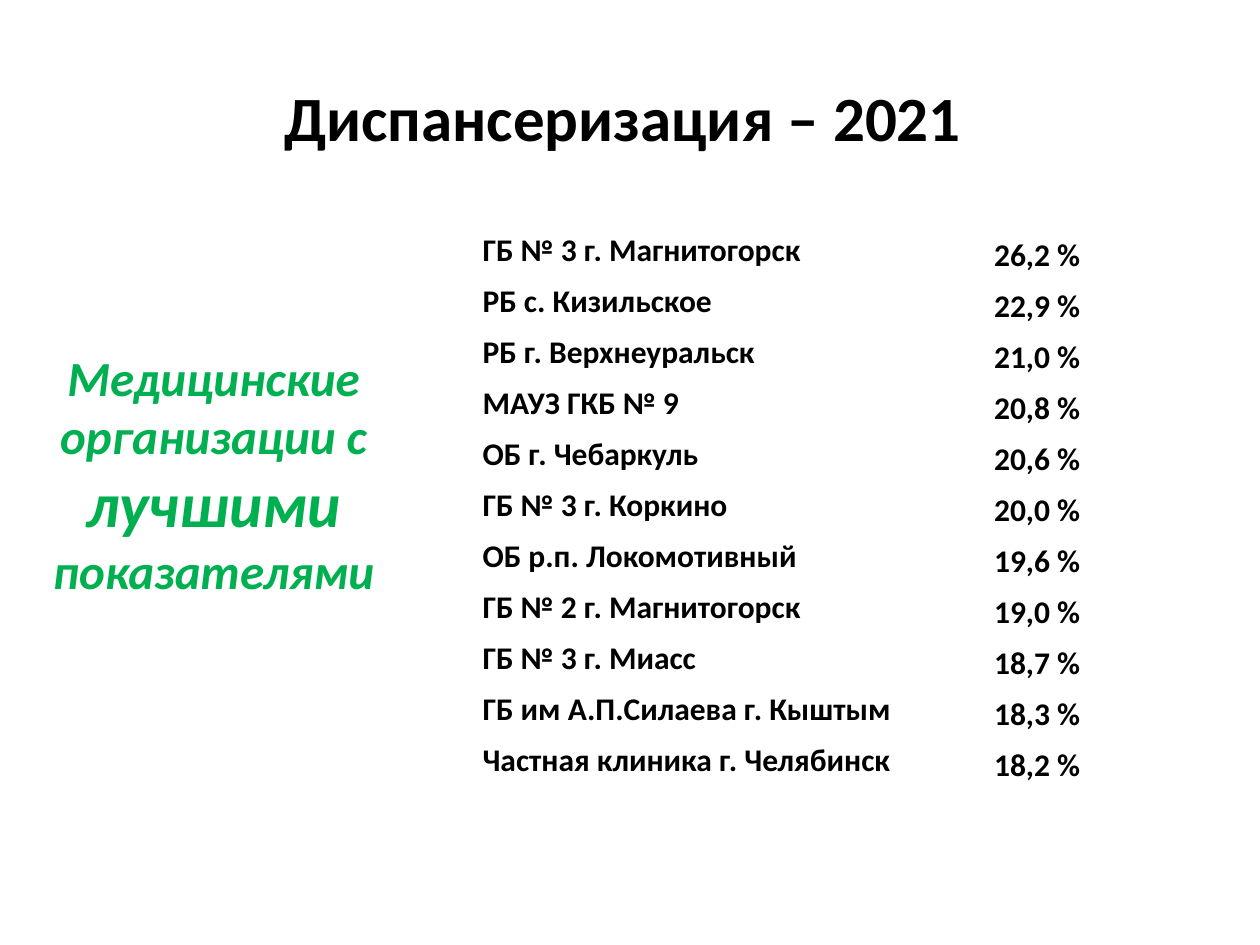
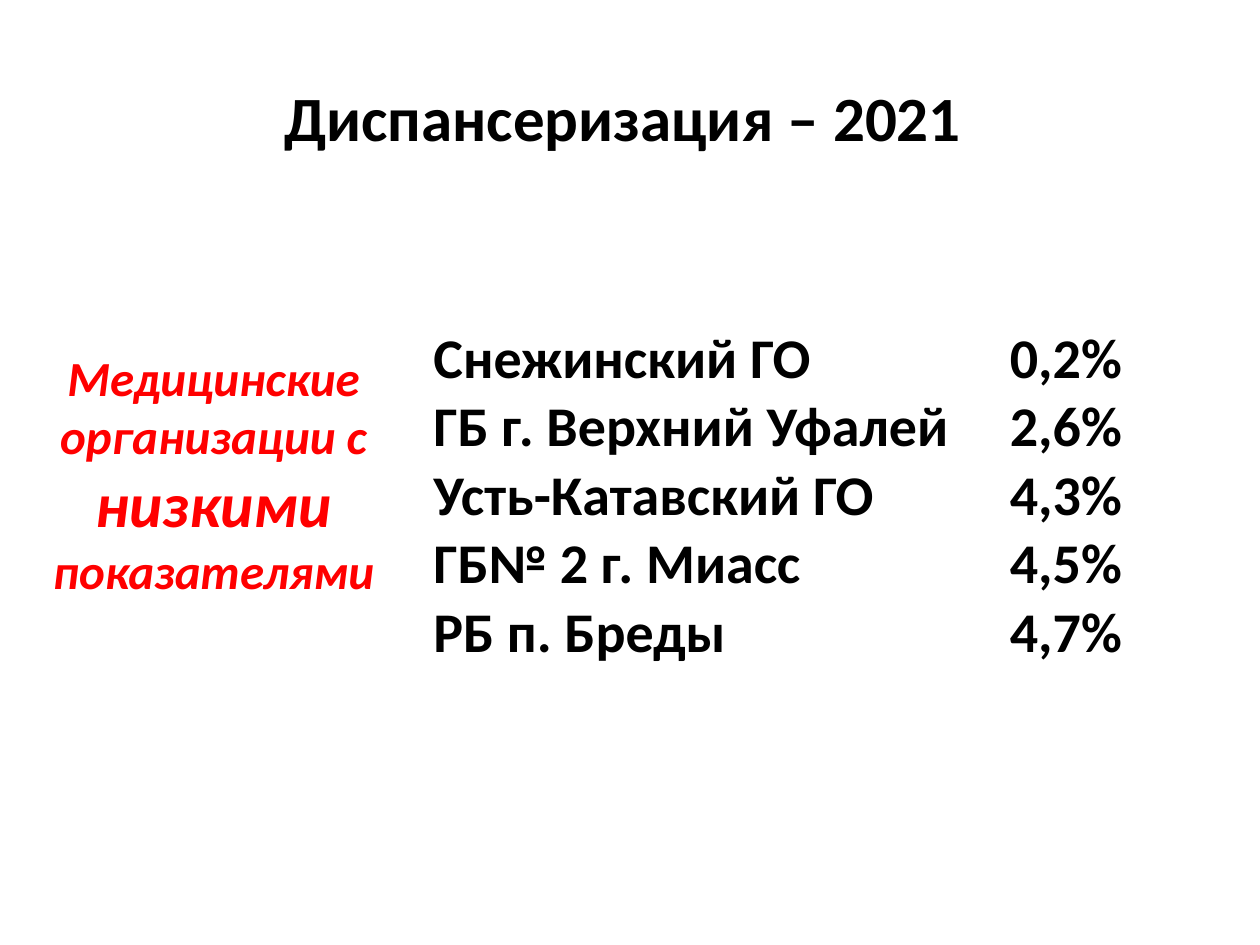
from lxml import etree
from pptx import Presentation
from pptx import util as u
from pptx.dml.color import RGBColor
from pptx.enum import text
from pptx.oxml.ns import qn

COLORS = {"ink": "000000", "paper": "FFFFFF", "best": "00B050", "low": "FF0000"}
FONT = "Calibri"
GRID = 0.1  # inches per column and per row
CENTER, LEFT = text.PP_ALIGN.CENTER, text.PP_ALIGN.LEFT
MIDDLE, BOTTOM = text.MSO_ANCHOR.MIDDLE, text.MSO_ANCHOR.BOTTOM

HEADING = "Диспансеризация – 2021 "
CAPTION = "Медицинские организации с "

BEST = [
    ("ГБ № 3 г. Магнитогорск", "26,2 %"),
    ("РБ с. Кизильское", "22,9 %"),
    ("РБ г. Верхнеуральск", "21,0 %"),
    ("МАУЗ ГКБ № 9", "20,8 %"),
    ("ОБ г. Чебаркуль", "20,6 %"),
    ("ГБ № 3 г. Коркино", "20,0 %"),
    ("ОБ р.п. Локомотивный", "19,6 %"),
    ("ГБ № 2 г. Магнитогорск", "19,0 %"),
    ("ГБ № 3 г. Миасс", "18,7 %"),
    ("ГБ им А.П.Силаева г. Кыштым", "18,3 %"),
    ("Частная клиника г. Челябинск", "18,2 %"),
]
LOW = [
    ("Снежинский ГО", "0,2%"),
    ("ГБ г. Верхний Уфалей", "2,6%"),
    ("Усть-Катавский ГО", "4,3%"),
    ("ГБ№ 2 г. Миасс", "4,5%"),
    ("РБ п. Бреды", "4,7%"),
]


def grid(units):
    return u.Inches(units * GRID)


def write(paragraph, words, size=18, color="ink", italic=False, align=LEFT):
    """Add one bold run to a paragraph."""
    paragraph.alignment = align
    run = paragraph.add_run()
    run.text = words
    run.font.name, run.font.size = FONT, u.Pt(size)
    run.font.bold, run.font.italic = True, italic
    run.font.color.rgb = RGBColor.from_string(COLORS[color])


def draw_borders(cell, bottom=1):
    """White rules round a cell, widths in points."""
    props = cell._tc.get_or_add_tcPr()
    for side, width in (("L", 1), ("R", 1), ("T", 1), ("B", bottom)):
        rule = etree.SubElement(props, qn(f"a:ln{side}"), w=str(u.Pt(width)))
        fill = etree.SubElement(rule, qn("a:solidFill"))
        etree.SubElement(fill, qn("a:srgbClr"), val=COLORS["paper"])


class Deck:
    def __init__(self):
        self.prs = Presentation()
        self.prs.slide_width, self.prs.slide_height = grid(100), grid(75)
        self.slide = None

    def add_slide(self):
        self.slide = self.prs.slides.add_slide(self.prs.slide_layouts[6])
        self.title()

    def text_frame(self, *place):
        frame = self.slide.shapes.add_textbox(*map(grid, place)).text_frame
        frame.word_wrap = True
        frame.vertical_anchor = MIDDLE
        return frame

    def title(self):
        frame = self.text_frame(5, 3, 90, 12.5)
        write(frame.paragraphs[0], HEADING, size=36, align=CENTER)

    def caption(self, verdict, ending, color, split=False):
        frame = self.text_frame(2.8, 21, 28.3, 33.1)
        first = frame.paragraphs[0]
        style = dict(color=color, italic=True, align=CENTER)
        write(first, CAPTION, size=28, **style)
        write(first, verdict, size=36, **style)
        last = frame.add_paragraph() if split else first
        write(last, ending, size=28, **style)

    def ratings(self, entries, left, top, columns, row, size,
                share_align=LEFT, first_rule=1):
        table = self.slide.shapes.add_table(
            len(entries), 2, grid(left), grid(top),
            grid(sum(columns)), grid(row * len(entries))).table
        table.first_row = table.horz_banding = False
        for column, width in zip(table.columns, columns):
            column.width = grid(width)
        formats = ((MIDDLE, LEFT), (BOTTOM, share_align))
        for r, entry in enumerate(entries):
            for c, (words, (anchor, align)) in enumerate(zip(entry, formats)):
                cell = table.cell(r, c)
                cell.margin_left = cell.margin_right = cell.margin_top = grid(0.1)
                cell.margin_bottom = 0
                cell.vertical_anchor = anchor
                draw_borders(cell, first_rule if r == 0 else 1)
                cell.fill.background()
                write(cell.text_frame.paragraphs[0], words, size=size, align=align)


def main():
    deck = Deck()

    # Best results
    deck.add_slide()
    deck.caption("лучшими", " показателями", "best")
    deck.ratings(BEST, 38.2, 17.8, (40.6, 9.8), 4.05, 18, first_rule=3)

    # Low results
    deck.add_slide()
    deck.caption("низкими", "показателями", "low", split=True)
    deck.ratings(LOW, 34.3, 25.7, (42.3, 16), 5.44, 32, share_align=CENTER)

    deck.prs.save("out.pptx")


if __name__ == "__main__":
    main()
